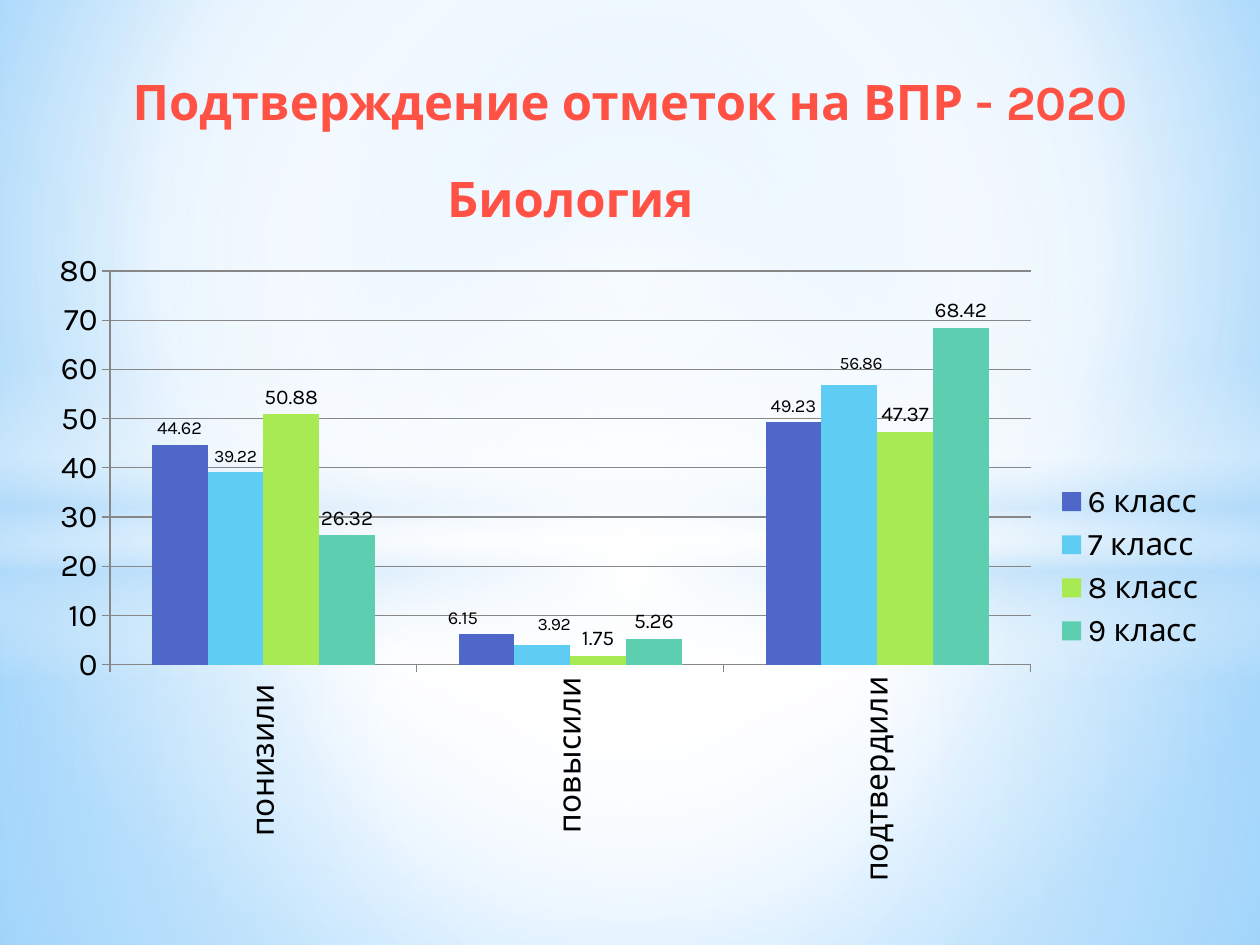
from copy import deepcopy

from pptx import Presentation
from pptx import util as u
from pptx.chart import data
from pptx.dml.color import RGBColor
from pptx.enum import chart as ch, shapes, text
from pptx.oxml import parse_xml
from pptx.oxml.ns import nsdecls, qn

FONT = "Karla"
RED = RGBColor(0xFF, 0x52, 0x44)
BLACK = RGBColor(0, 0, 0)
GRAY = RGBColor(0x87, 0x87, 0x87)

# Gradient stops: position %, colour, opacity %
SKY = [(0, "9ED5FF", 100), (60, "FFFFFF", 100), (100, "5BB9FF", 100)]
LOW = [(0, "FFFFFF", 91), (37, "FFFFFF", 76), (100, "B4DCFA", 79)]
HIGH = [(0, "FFFFFF", 89), (48, "FFFFFF", 62), (100, "B4DCFA", 79)]
BAND = [(0, "FFFFFF", 0), (29, "FFFFFF", 30), (45, "B4DCFA", 40),
        (55, "FFFFFF", 26), (65, "B4DCFA", 60), (100, "FFFFFF", 0)]
GLOW = [(0, "FFFFFF", 100), (54, "FFFFFF", 0)]
CENTER = (50, 50, 50, 50)

# Shape kind, box, stops, focus (None for a vertical gradient)
RECT, OVAL = shapes.MSO_SHAPE.RECTANGLE, shapes.MSO_SHAPE.OVAL
LAYERS = [
    (RECT, (0, 4.23, 10, 3.27), LOW, CENTER),
    (RECT, (0, 0, 10, 4.23), HIGH, CENTER),
    (RECT, (0, 2.9, 10, 2.5), BAND, None),
    (OVAL, (0, 1.75, 10, 5.58), GLOW, CENTER),
]

TITLES = [
    ("Подтверждение отметок на ВПР - 2020", (0.67, 0.52, 8.66, 0.57)),
    ("Биология", (1.77, 1.29, 5.51, 0.57)),
]

GROUPS = ["понизили ", "повысили", "подтвердили"]
# Name, values, colour, label size, label shifts by point
SERIES = [
    ("6 класс", (44.62, 6.15, 49.23), RGBColor(0x4E, 0x67, 0xC8), 10.5,
     {1: (-0.02, 0)}),
    ("7 класс", (39.22, 3.92, 56.86), RGBColor(0x5E, 0xCC, 0xF3), 10,
     {1: (0.01, -0.01), 2: (0.01, -0.01)}),
    ("8 класс", (50.88, 1.75, 47.37), RGBColor(0xA7, 0xEA, 0x52), 12, {}),
    ("9 класс", (26.32, 5.26, 68.42), RGBColor(0x5D, 0xCE, 0xAF), 12, {}),
]
CHART = (0.31, 1.89, 9.37, 5.21)
PLOT = {"x": 0.06, "y": 0.05, "w": 0.78, "h": 0.6}


def inches(box):
    return [u.Inches(n) for n in box]


def shade(fill, stops, focus):
    """Put a gradient in the place of a plain fill element."""
    marks = "".join(
        f'<a:gs pos="{pos * 1000}"><a:srgbClr val="{tone}">'
        f'<a:alpha val="{alpha * 1000}"/></a:srgbClr></a:gs>'
        for pos, tone, alpha in stops)
    if focus:
        sides = " ".join(f'{s}="{n * 1000}"' for s, n in zip("ltrb", focus))
        way = f'<a:path path="circle"><a:fillToRect {sides}/></a:path>'
    else:
        way = '<a:lin ang="5400000" scaled="0"/>'
    fill.getparent().replace(fill, parse_xml(
        f'<a:gradFill {nsdecls("a")} rotWithShape="1">'
        f'<a:gsLst>{marks}</a:gsLst>{way}</a:gradFill>'))


def style(font, size, color=BLACK, bold=False):
    font.name, font.size, font.bold = FONT, u.Pt(size), bold
    font.color.rgb = color


def write(slide, words, box, **fmt):
    frame = slide.shapes.add_textbox(*inches(box)).text_frame
    frame.word_wrap = True
    frame.auto_size = text.MSO_AUTO_SIZE.SHAPE_TO_FIT_TEXT
    para = frame.paragraphs[0]
    para.alignment = text.PP_ALIGN.CENTER
    run = para.add_run()
    run.text = words
    style(run.font, **fmt)


def shift(labels, moves):
    """Move single data labels by a share of the chart size."""
    root = labels._element
    for spot, (point, (dx, dy)) in enumerate(moves.items()):
        label = parse_xml(
            f'<c:dLbl {nsdecls("c")}><c:idx val="{point}"/><c:layout>'
            f'<c:manualLayout><c:x val="{dx}"/><c:y val="{dy}"/>'
            '</c:manualLayout></c:layout><c:dLblPos val="outEnd"/>'
            '<c:showLegendKey val="0"/><c:showVal val="1"/>'
            '<c:showCatName val="0"/><c:showSerName val="0"/>'
            '<c:showPercent val="0"/><c:showBubbleSize val="0"/></c:dLbl>')
        label.insert(2, deepcopy(root.find(qn("c:txPr"))))
        root.insert(spot, label)


def place(plot):
    """Fix the inner plot area."""
    area = plot._element.getparent()
    old = area.find(qn("c:layout"))
    if old is not None:
        area.remove(old)
    modes = '<c:xMode val="edge"/><c:yMode val="edge"/>'
    sizes = "".join(f'<c:{k} val="{n}"/>' for k, n in PLOT.items())
    area.insert(0, parse_xml(
        f'<c:layout {nsdecls("c")}><c:manualLayout>'
        f'<c:layoutTarget val="inner"/>{modes}{sizes}'
        '</c:manualLayout></c:layout>'))


def graph(slide):
    source = data.CategoryChartData()
    source.categories = GROUPS
    for name, vals, *_ in SERIES:
        source.add_series(name, vals)
    chart = slide.shapes.add_chart(
        ch.XL_CHART_TYPE.COLUMN_CLUSTERED, *inches(CHART), source).chart
    style(chart.font, 18)
    chart.has_title = False
    chart.has_legend = True
    chart.legend.position = ch.XL_LEGEND_POSITION.RIGHT
    chart.legend.include_in_layout = False

    plot = chart.plots[0]
    plot.gap_width, plot.overlap, plot.vary_by_categories = 150, 0, False
    place(plot)
    for series, (_, _, color, size, moves) in zip(plot.series, SERIES):
        series.format.fill.solid()
        series.format.fill.fore_color.rgb = color
        labels = series.data_labels
        labels.show_value = True
        labels.position = ch.XL_LABEL_POSITION.OUTSIDE_END
        style(labels.font, size)
        shift(labels, moves)

    cats, vals = chart.category_axis, chart.value_axis
    vals.minimum_scale, vals.maximum_scale, vals.major_unit = 0, 80, 10
    vals.has_major_gridlines = True
    for part in (cats, vals, vals.major_gridlines):
        part.format.line.color.rgb = GRAY
        part.format.line.width = u.Pt(0.75)
    for axis in (cats, vals):
        axis.major_tick_mark = ch.XL_TICK_MARK.OUTSIDE
        style(axis.tick_labels.font, 18)
    turn = cats._element.find(qn("c:txPr")).find(qn("a:bodyPr"))
    turn.set("rot", "-5400000")
    turn.set("vert", "horz")


def main():
    deck = Presentation()
    deck.slide_width, deck.slide_height = u.Inches(10), u.Inches(7.5)
    slide = deck.slides.add_slide(deck.slide_layouts[6])
    slide.background.fill.solid()
    shade(slide.element.xpath(".//p:bgPr/a:solidFill")[0],
          SKY, (20, 10, 20, 60))
    for kind, box, stops, focus in LAYERS:
        layer = slide.shapes.add_shape(kind, *inches(box))
        layer.shadow.inherit = False
        layer.line.fill.background()
        layer.fill.solid()
        shade(layer.element.spPr.find(qn("a:solidFill")), stops, focus)
    write(slide, *TITLES[0], size=28, color=RED, bold=True)
    graph(slide)
    write(slide, *TITLES[1], size=28, color=RED, bold=True)
    deck.save("out.pptx")


if __name__ == "__main__":
    main()
